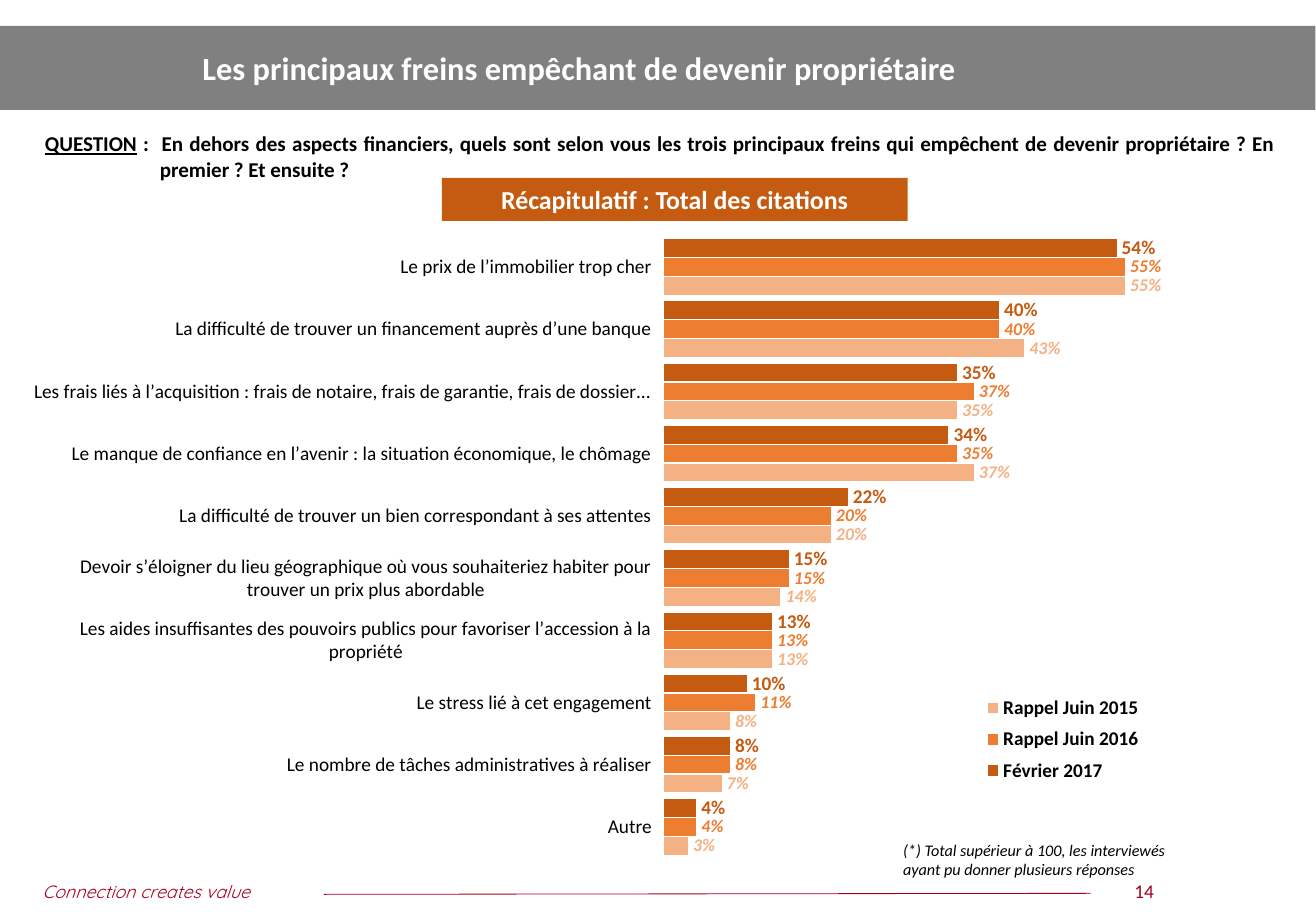
from dataclasses import dataclass

from lxml import etree
from pptx import Presentation
from pptx import util as u
from pptx.chart.data import CategoryChartData
from pptx.dml.color import RGBColor
from pptx.enum import chart as ch, shapes, text
from pptx.oxml import ns

PX = 7842
SLIDE_SIZE = (11.29, 7.87)


@dataclass(frozen=True)
class Theme:
    font: str = "Calibri"
    slogan_font: str = "Quicksand"
    black: str = "000000"
    white: str = "FFFFFF"
    grey: str = "808080"
    red: str = "A50021"
    rust: str = "C55A11"
    orange: str = "ED7D31"
    peach: str = "F4B183"
    title: int = 20
    subtitle: int = 16
    question: int = 13
    chart: int = 12
    reminder: int = 11
    slogan: int = 11
    number: int = 12
    note: int = 10


T = Theme()

TITLE = "Les principaux freins empêchant de devenir propriétaire"
QUESTION = (
    "QUESTION",
    " :\tEn dehors des aspects financiers, quels sont selon vous les trois principaux "
    "freins qui empêchent de devenir propriétaire ? En premier ? Et ensuite ?",
)
SUBTITLE = "Récapitulatif : Total des citations"
NOTE = "(*) Total supérieur à 100, les interviewés ayant pu donner plusieurs réponses"
SLOGAN = "Connection creates value"
NUMBER = "14"

WAVES = [
    ("Février 2017", T.rust, T.chart, False),
    ("Rappel Juin 2016", T.orange, T.reminder, True),
    ("Rappel Juin 2015", T.peach, T.reminder, True),
]
OBSTACLES = [
    ("Le prix de l’immobilier trop cher", 54, 55, 55),
    ("La difficulté de trouver un financement auprès d’une banque", 40, 40, 43),
    ("Les frais liés à l’acquisition : frais de notaire, frais de garantie, "
     "frais de dossier...", 35, 37, 35),
    ("Le manque de confiance en l’avenir : la situation économique, le chômage", 34, 35, 37),
    ("La difficulté de trouver un bien correspondant à ses attentes", 22, 20, 20),
    ("Devoir s’éloigner du lieu géographique où vous souhaiteriez habiter pour "
     "trouver un prix plus abordable", 15, 15, 14),
    ("Les aides insuffisantes des pouvoirs publics pour favoriser l’accession à la "
     "propriété", 13, 13, 13),
    ("Le stress lié à cet engagement", 10, 11, 8),
    ("Le nombre de tâches administratives à réaliser", 8, 8, 7),
    ("Autre", 4, 4, 3),
]

CHART_BOX = (34, 236, 1206, 624)
PLOT_BOX = (660, 236, 508, 623)
LEGEND_BOX = (978, 689, 168, 102)


def px(*lengths):
    return [u.Emu(length * PX) for length in lengths]


def style(font, size, color, bold=False, italic=False, name=T.font):
    font.name, font.size, font.bold, font.italic = name, u.Pt(size), bold, italic
    font.color.rgb = RGBColor.from_string(color)


def write(shape, words, size, color, align=text.PP_ALIGN.LEFT, **look):
    frame = shape.text_frame
    frame.word_wrap = True
    paragraph = frame.paragraphs[0]
    paragraph.alignment = align
    for part in words:
        paragraph.add_run().text = part
    style(paragraph.font, size, color, **look)
    return frame


def add_text(slide, box, words, *args, **look):
    return write(slide.shapes.add_textbox(*px(*box)), words, *args, **look)


def add_band(slide, box, color):
    band = slide.shapes.add_shape(shapes.MSO_SHAPE.RECTANGLE, *px(*box))
    band.shadow.inherit = False
    band.fill.solid()
    band.fill.fore_color.rgb = RGBColor.from_string(color)
    band.line.fill.background()
    return band


def layout_xml(box, inner=False):
    left, top, width, height = CHART_BOX
    shares = {
        "x": (box[0] - left) / width,
        "y": (box[1] - top) / height,
        "w": box[2] / width,
        "h": box[3] / height,
    }
    layout = etree.Element(ns.qn("c:layout"))
    manual = etree.SubElement(layout, ns.qn("c:manualLayout"))
    settings = [("layoutTarget", "inner")] if inner else []
    settings += [("xMode", "edge"), ("yMode", "edge")]
    settings += [(key, f"{share:.3f}") for key, share in shares.items()]
    for tag, value in settings:
        etree.SubElement(manual, ns.qn(f"c:{tag}")).set("val", value)
    return layout


def place(element, box, before, inner=False):
    for old in element.findall(ns.qn("c:layout")):
        element.remove(old)
    layout = layout_xml(box, inner)
    anchor = element.find(ns.qn(before))
    anchor.addprevious(layout) if inner else anchor.addnext(layout)


def add_obstacle_chart(slide):
    data = CategoryChartData(number_format="0%")
    data.categories = [obstacle[0] for obstacle in OBSTACLES]
    for column, wave in enumerate(WAVES, 1):
        data.add_series(wave[0], [obstacle[column] / 100 for obstacle in OBSTACLES])
    chart = slide.shapes.add_chart(
        ch.XL_CHART_TYPE.BAR_CLUSTERED, *px(*CHART_BOX), data
    ).chart
    style(chart.font, T.chart, T.black)
    chart.has_title = False

    obstacles = chart.category_axis
    obstacles.reverse_order = True
    obstacles.format.line.fill.background()
    shares = chart.value_axis
    shares.minimum_scale, shares.maximum_scale = 0, 0.6
    shares.has_major_gridlines = False
    shares.visible = False

    bars = chart.plots[0]
    bars.gap_width, bars.overlap, bars.vary_by_categories = 30, 0, False
    for wave, (_, color, size, italic) in zip(bars.series, WAVES):
        wave.format.fill.solid()
        wave.format.fill.fore_color.rgb = RGBColor.from_string(color)
        wave.format.line.color.rgb = RGBColor.from_string(T.white)
        wave.format.line.width = u.Pt(0.75)
        labels = wave.data_labels
        labels.show_value = True
        labels.number_format, labels.number_format_is_linked = "0%", False
        labels.position = ch.XL_LABEL_POSITION.OUTSIDE_END
        style(labels.font, size, color, bold=True, italic=italic)

    chart.has_legend = True
    legend = chart.legend
    legend.position = ch.XL_LEGEND_POSITION.RIGHT
    legend.include_in_layout = False
    style(legend.font, T.chart, T.black, bold=True)
    place(legend._element, LEGEND_BOX, "c:legendPos")
    place(bars._element.getparent(), PLOT_BOX, "c:barChart", inner=True)


def add_footer(slide):
    add_text(slide, (31, 876, 347, 34), [SLOGAN], T.slogan, T.red,
             italic=True, name=T.slogan_font)
    rule = slide.shapes.add_connector(shapes.MSO_CONNECTOR.STRAIGHT, *px(324, 895, 1091, 894))
    rule.line.color.rgb = RGBColor.from_string(T.red)
    rule.line.width = u.Pt(0.5)
    etree.SubElement(rule._element.spPr, ns.qn("a:effectLst"))
    add_text(slide, (1110, 874, 69, 35), [NUMBER], T.number, T.red, text.PP_ALIGN.CENTER)


def add_question(slide):
    frame = add_text(slide, (34, 110, 1282, 93), QUESTION, T.question, T.black,
                     text.PP_ALIGN.JUSTIFY, bold=True)
    frame.margin_left, frame.margin_top, frame.margin_right, frame.margin_bottom = px(
        11, 21, 42, 21)
    paragraph = frame.paragraphs[0]
    hanging = 115 * PX
    properties = paragraph._p.get_or_add_pPr()
    properties.set("marL", str(hanging))
    properties.set("indent", str(-hanging))
    paragraph.runs[0].font.underline = True


def main():
    deck = Presentation()
    deck.slide_width, deck.slide_height = map(u.Inches, SLIDE_SIZE)
    deck.element.sldSz.attrib.pop("type", None)
    slide = deck.slides.add_slide(deck.slide_layouts[6])
    add_band(slide, (0, 26, 1316, 84), T.grey)
    add_footer(slide)
    add_obstacle_chart(slide)
    heading = add_text(slide, (191, 26, 1105, 84), [TITLE], T.title, T.white, bold=True)
    heading.vertical_anchor = text.MSO_ANCHOR.MIDDLE
    add_question(slide)
    add_text(slide, (892, 835, 305, 51), [NOTE], T.note, T.black, italic=True)
    write(add_band(slide, (442, 178, 466, 43), T.rust), [SUBTITLE], T.subtitle, T.white,
          text.PP_ALIGN.CENTER, bold=True)
    deck.save("out.pptx")


if __name__ == "__main__":
    main()
